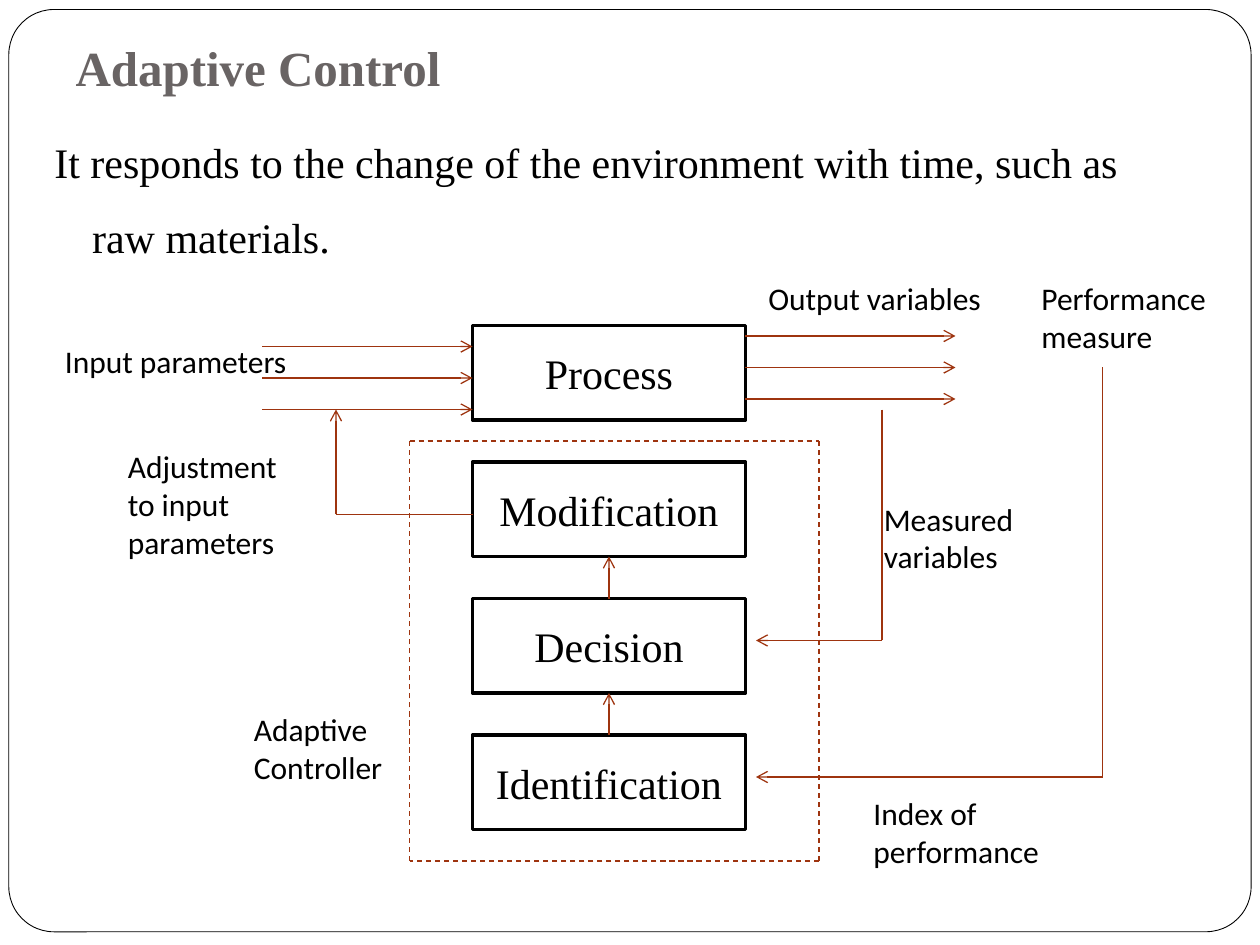
from pptx import Presentation, util as u
from pptx.dml.color import RGBColor
from pptx.enum import dml, shapes, text
from pptx.oxml.ns import qn
from lxml import etree

COLS, ROWS = 120, 90
BLACK, WHITE, GREY, RUST = "000000", "FFFFFF", "696464", "9E340F"
SERIF, SANS = "Times New Roman", "Calibri"
TOP, MID, LOW = text.MSO_ANCHOR.TOP, text.MSO_ANCHOR.MIDDLE, text.MSO_ANCHOR.BOTTOM
HEAD = dict(name=SERIF, size=u.Pt(28), bold=True)
BODY = dict(name=SERIF, size=u.Pt(24), bold=False)
NOTE = dict(name=SANS, size=u.Pt(18), bold=False)


def tint(hue):
    return RGBColor.from_string(hue)


def scale(box):
    """Return a function turning a grid point into a place inside the box."""
    left, top, width, height = box
    return lambda col, row: (int(left + width * col / COLS),
                             int(top + height * row / ROWS))


def write(shape, words, font, hue=BLACK, anchor=TOP, align=text.PP_ALIGN.LEFT):
    frame = shape.text_frame
    frame.text = words
    frame.word_wrap = True
    frame.vertical_anchor = anchor
    para = frame.paragraphs[0]
    para.alignment = align
    for key, value in font.items():
        setattr(para.runs[0].font, key, value)
    para.runs[0].font.color.rgb = tint(hue)
    return para


def panel(slide, kind, area, width):
    shape = slide.shapes.add_shape(kind, *area)
    shape.shadow.inherit = False
    shape.fill.solid()
    shape.fill.fore_color.rgb = tint(WHITE)
    shape.line.color.rgb = tint(BLACK)
    shape.line.width = u.Pt(width)
    return shape


def route(slide, place, points, arrow=True, dash=False):
    """Join grid points with straight lines, the last one ending in an arrow."""
    for start, end in zip(points, points[1:]):
        line = slide.shapes.add_connector(
            shapes.MSO_CONNECTOR.STRAIGHT, *place(*start), *place(*end))
        line.line.color.rgb = tint(RUST)
        line.line.width = u.Pt(0.75)
        if dash:
            line.line.dash_style = dml.MSO_LINE.DASH
        if arrow and end == points[-1]:
            etree.SubElement(line.line._get_or_add_ln(), qn("a:tailEnd"), type="arrow")
        etree.SubElement(line._element.spPr, qn("a:effectLst"))


def border(slide, box):
    left, top, width, height = box
    area = [int(v) for v in (left + width * 0.007, top + height * 0.01,
                             width * 0.986, height * 0.976)]
    shape = panel(slide, shapes.MSO_SHAPE.ROUNDED_RECTANGLE, area, 0.5)
    shape.adjustments[0] = 0.049


def heading(slide, box):
    title = slide.shapes.title
    for key, value in zip(("left", "top", "width", "height"), box):
        setattr(title, key, value)
    write(title, "Adaptive Control", HEAD, GREY, LOW)
    title.text_frame.margin_bottom = u.Inches(0.1)


def intro(slide, box):
    para = write(slide.shapes.add_textbox(*box),
                 "It responds to the change of the environment with time, "
                 "such as raw materials.", BODY)
    para.line_spacing = 1.5
    para.space_before = u.Pt(5.8)
    hang = u.Inches(0.3)
    para._p.get_or_add_pPr().set("marL", str(hang))
    para._p.get_or_add_pPr().set("indent", str(-hang))


def stages(slide, place):
    left, top, wide, tall, pitch = 45, 31, 26, 9, 13
    names = ("Process", "Modification", "Decision", "Identification")
    for i, name in enumerate(names):
        row = top + i * pitch
        shape = panel(slide, shapes.MSO_SHAPE.RECTANGLE,
                      place(left, row) + place(wide, tall), 2)
        write(shape, name, BODY, anchor=MID, align=text.PP_ALIGN.CENTER)
        if i > 1:
            mid = left + wide / 2
            route(slide, place, [(mid, row), (mid, row - pitch + tall)])


def flows(slide, place):
    for i in range(3):
        route(slide, place, [(25, 33 + 3 * i), (45, 33 + 3 * i)])
        route(slide, place, [(71, 32 + 3 * i), (91, 32 + 3 * i)])
    for points in ([(45, 49), (32, 49), (32, 39)],
                   [(84, 39), (84, 61), (72, 61)],
                   [(105, 35), (105, 74), (72, 74)]):
        route(slide, place, points)
    route(slide, place, [(39, 42), (78, 42), (78, 82), (39, 82), (39, 42)],
          arrow=False, dash=True)


def labels(slide, place):
    for words, col, row, wide, tall in (
            ("Performance measure", 98, 26, 22, 8.5),
            ("Input parameters", 5, 32, 26, 4.8),
            ("Adjustment to input parameters", 11, 42, 19, 12.1),
            ("Output variables", 72, 26, 24, 4.8),
            ("Index of performance", 82, 75, 26, 8.5),
            ("Measured variables", 83, 47, 23, 8.5),
            ("Adaptive Controller", 23, 67, 22, 8.5)):
        area = place(col, row) + place(wide, tall)
        write(slide.shapes.add_textbox(*area), words, NOTE)


def diagram(slide, box):
    place = scale(box)
    for part in (stages, flows, labels):
        part(slide, place)


def main():
    deck = Presentation()
    deck.slide_width, deck.slide_height = u.Inches(10), u.Inches(7.5)
    slide = deck.slides.add_slide(deck.slide_layouts[5])
    full = (0, 0, deck.slide_width, deck.slide_height)
    place = scale(full)
    border(slide, full)
    tree = slide.shapes._spTree
    tree.append(slide.shapes.title._element)
    heading(slide, place(6, 2.8) + place(108, 7.6))
    intro(slide, place(4, 10) + place(108, 17))
    diagram(slide, full)
    deck.save("out.pptx")


if __name__ == "__main__":
    main()
